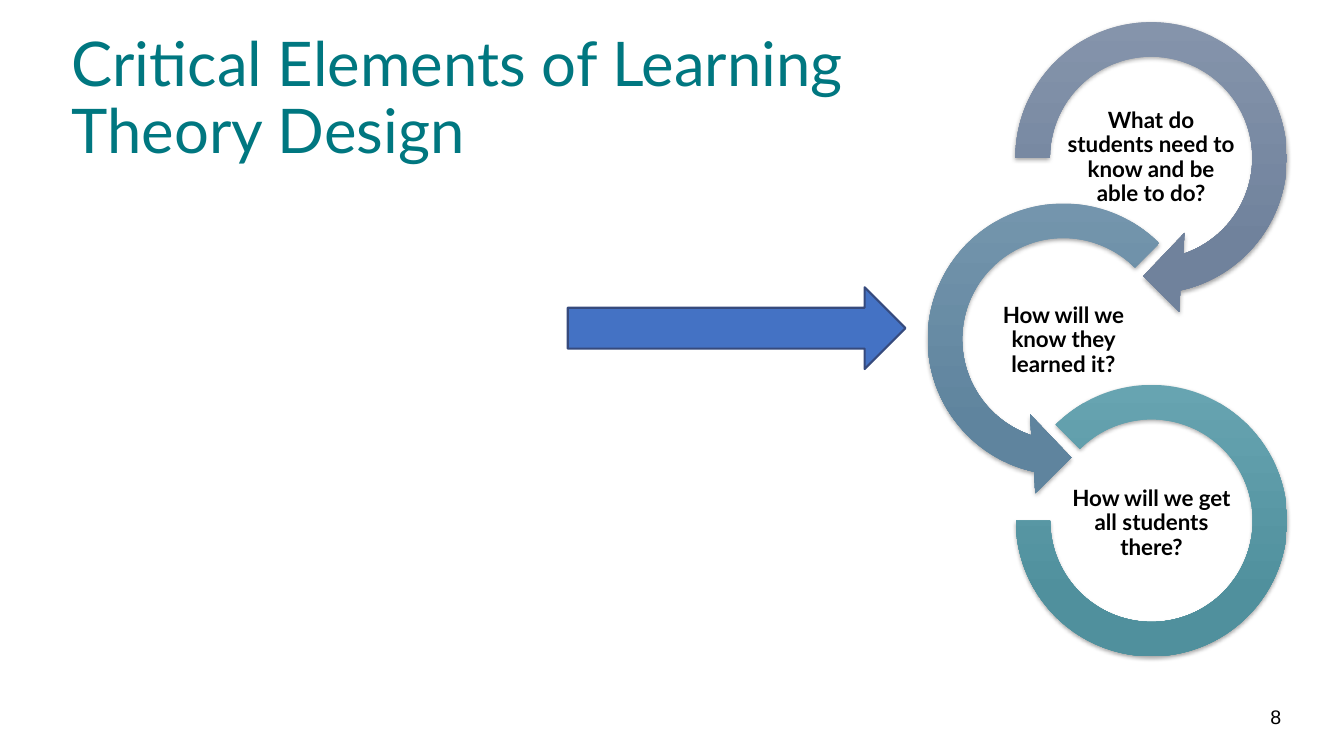
from lxml import etree
from math import cos, radians, sin, tan
from pptx import Presentation
from pptx.dml.color import RGBColor
from pptx.enum.shapes import MSO_SHAPE
from pptx.enum.text import MSO_ANCHOR, MSO_AUTO_SIZE, PP_ALIGN
from pptx.oxml import parse_xml
from pptx.util import Cm, Pt

ARC = MSO_SHAPE.BLOCK_ARC
ARROW = MSO_SHAPE.RIGHT_ARROW
MIDDLE = MSO_ANCHOR.MIDDLE
LEFT, CENTER, RIGHT = PP_ALIGN.LEFT, PP_ALIGN.CENTER, PP_ALIGN.RIGHT
TEAL = RGBColor(0x00, 0x77, 0x80)
BLACK = RGBColor(0, 0, 0)
BLUE = RGBColor(0x44, 0x72, 0xC4)
NAVY = RGBColor(0x36, 0x4A, 0x7D)
OUTER, INNER, HALF = 3.42, 2.55, 3.98
NS = "http://schemas.openxmlformats.org/drawingml/2006/main"
SHADOW = (
    f'<a:outerShdw xmlns:a="{NS}" '
    'blurRad="40000" dist="20000" dir="5400000" rotWithShape="0">'
    '<a:srgbClr val="000000"><a:alpha val="35000"/></a:srgbClr></a:outerShdw>'
)


def write(box, text, size, face, color, align, bold=False, space=0.9):
    frame = box.text_frame
    frame.word_wrap = True
    frame.auto_size = MSO_AUTO_SIZE.NONE
    frame.vertical_anchor = MIDDLE
    frame.text = text
    for para in frame.paragraphs:
        para.alignment = align
        para.line_spacing = space
        for run in para.runs:
            run.font.size = Pt(size)
            run.font.name = face
            run.font.bold = bold
            run.font.color.rgb = color
    return frame


def curve(radius, start, end):
    step = radians(end - start) / 3
    pull = 4 / 3 * tan(step / 4)
    parts = []
    for index in range(3):
        a = radians(start) + index * step
        b = a + step
        parts.append(("cubicBezTo", [
            (radius * (cos(a) - pull * sin(a)), radius * (sin(a) + pull * cos(a))),
            (radius * (cos(b) + pull * sin(b)), radius * (sin(b) - pull * cos(b))),
            (radius * cos(b), radius * sin(b)),
        ]))
    return parts


deck = Presentation()
deck.slide_width, deck.slide_height = Cm(33.87), Cm(19.05)
slide = deck.slides.add_slide(deck.slide_layouts[5])
shapes = slide.shapes

title = shapes.title
title.left, title.top, title.width, title.height = Cm(1.55), Cm(0.69), Cm(23.88), Cm(3.66)
write(title, "Critical Elements of Learning \vTheory Design", 44, "Lato", TEAL, LEFT)

steps = [
    ("What do students need to know and be able to do?", 29.01, 1, 180,
     RGBColor(0x87, 0x96, 0xAD), RGBColor(0x70, 0x82, 0x9C)),
    ("How will we know they learned it?", 26.8, -1, 225,
     RGBColor(0x76, 0x97, 0xAE), RGBColor(0x5F, 0x84, 0x9E)),
    ("How will we get all students there?", 29.02, 0, 225,
     RGBColor(0x67, 0xA4, 0xB1), RGBColor(0x50, 0x90, 0x9D)),
]
for row, (text, x, side, start, light, dark) in enumerate(steps):
    y = 3.98 + 4.57 * row
    if side:
        west, east, north, south = Cm(x - HALF), Cm(x + HALF), Cm(y - HALF), Cm(y + HALF)
        pen = shapes.build_freeform(west, north, scale=1.0)
        pen.add_line_segments([(east, north), (east, south), (west, south)])
        ring = pen.convert_to_shape()
        outline = ring._element.spPr.find(".//{*}path")
        for node in list(outline):
            outline.remove(node)
        first = (OUTER * cos(radians(start)), OUTER * sin(radians(start)))
        moves = [("moveTo", [first])] + curve(OUTER, start, 437.6)
        head = [(0.71, 3.88), (-0.2, 2.98), (0.84, 1.89),
                (INNER * cos(radians(431.5)), INNER * sin(radians(431.5)))]
        moves += [("lnTo", [spot]) for spot in head]
        moves += curve(INNER, 431.5, start) + [("close", [])]
        for kind, spots in moves:
            node = etree.SubElement(outline, f"{{{NS}}}{kind}")
            for dx, dy in spots:
                etree.SubElement(node, f"{{{NS}}}pt", x=str(Cm(HALF + side * dx)),
                                 y=str(Cm(HALF + dy)))
    else:
        ring = shapes.add_shape(ARC, Cm(x - OUTER), Cm(y - OUTER), Cm(2 * OUTER), Cm(2 * OUTER))
        for index, value in enumerate((135, 108, 0.127)):
            ring.adjustments[index] = value
    ring.line.fill.background()
    ring.fill.gradient()
    ring.fill.gradient_angle = 270
    for stop, color, place in zip(ring.fill.gradient_stops, (light, dark), (0, 0.78)):
        stop.color.rgb = color
        stop.position = place
    ring.shadow.inherit = False
    effects = ring._element.spPr.find("{*}effectLst")
    effects.append(parse_xml(SHADOW))

    label = shapes.add_textbox(Cm(x - 2.21), Cm(2.87 + 4.61 * row), Cm(4.42), Cm(2.21))
    frame = write(label, text, 16, "Lato", BLACK, CENTER, True)
    frame.margin_left = frame.margin_right = Cm(0.03)
    frame.margin_top = frame.margin_bottom = Cm(0.03)

arrow = shapes.add_shape(ARROW, Cm(14.31), Cm(7.24), Cm(8.51), Cm(2.06))
arrow.shadow.inherit = False
arrow.fill.solid()
arrow.fill.fore_color.rgb = BLUE
arrow.line.color.rgb = NAVY
arrow.line.width = Pt(1.5)

number = shapes.add_textbox(Cm(30.63), Cm(17.55), Cm(1.91), Cm(1.02))
write(number, "8", 14, "Arial", BLACK, RIGHT, space=1.0)

deck.save("out.pptx")
